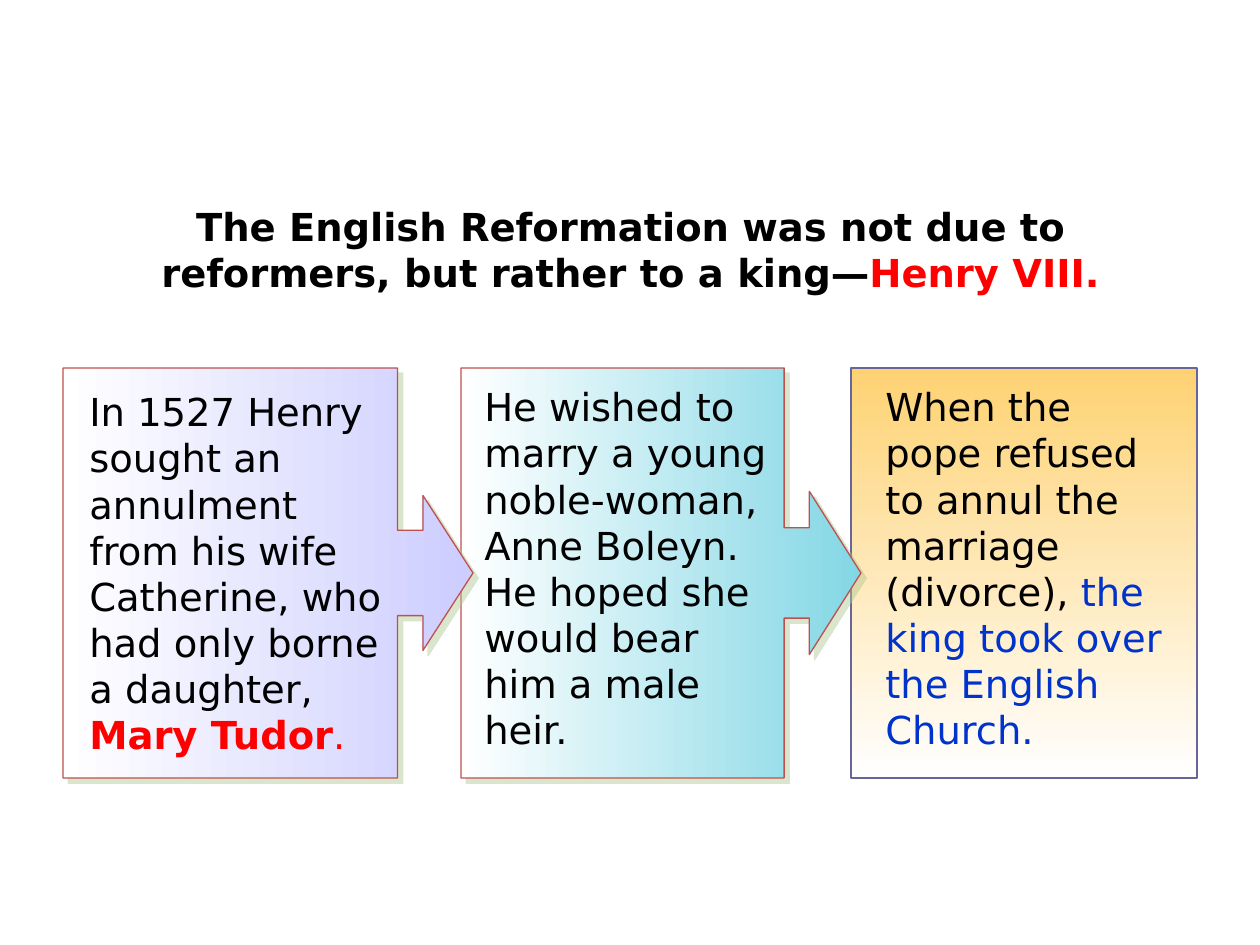
from dataclasses import dataclass

from lxml import etree
from pptx import Presentation
from pptx.dml.color import RGBColor
from pptx.enum.shapes import MSO_SHAPE
from pptx.enum.text import PP_ALIGN
from pptx.oxml.ns import qn
from pptx.util import Pt

RECTANGLE = MSO_SHAPE.RECTANGLE
CALLOUT = MSO_SHAPE.RIGHT_ARROW_CALLOUT
LEFT, CENTER = PP_ALIGN.LEFT, PP_ALIGN.CENTER
EMU_PER_PX = 914400 // 126
SLIDE_SIZE = (1260, 945)
PANEL_TOP, PANEL_HEIGHT = 368, 410


@dataclass(frozen=True)
class Theme:
    font: str = "DejaVu Sans"
    size: int = 22
    line_width: float = 0.75
    black: str = "000000"
    red: str = "FF0000"
    blue: str = "0033CC"
    white: str = "FFFFFF"
    lavender: str = "CDCDFF"
    aqua: str = "83D7E5"
    amber: str = "FED273"
    brick: str = "C0504D"
    slate: str = "666699"
    shadow: str = "ADC793"


THEME = Theme()

TITLE = {
    "box": (116, 197, 1029, 106),
    "runs": [
        ("The English Reformation was not due to reformers, but rather to a king—", THEME.black, True),
        ("Henry VIII.", THEME.red, True),
    ],
}
CAUSE = {
    "shape": CALLOUT, "left": 63, "width": 410,
    "stops": (THEME.white, THEME.lavender), "angle": 0, "line": THEME.brick,
    "adjustments": (0.208, 0.189, 0.122, 0.816),
    "box": (77, 382, 323, 387),
    "runs": [
        ("In 1527 Henry sought an annulment from his wife Catherine, who had only borne a daughter, ", THEME.black, False),
        ("Mary Tudor", THEME.red, True),
        (".", THEME.red, False),
    ],
}
WISH = {
    "shape": CALLOUT, "left": 461, "width": 400,
    "stops": (THEME.white, THEME.aqua), "angle": 0, "line": THEME.brick,
    "adjustments": (0.226, 0.204, 0.129, 0.808),
    "box": (472, 377, 316, 387),
    "runs": [
        ("He wished to marry a young noble-woman, Anne Boleyn. He hoped she would bear him a male heir.", THEME.black, False),
    ],
}
RESULT = {
    "shape": RECTANGLE, "left": 851, "width": 346,
    "stops": (THEME.amber, THEME.white), "angle": 270, "line": THEME.slate,
    "adjustments": (),
    "box": (873, 377, 312, 386),
    "runs": [
        ("When the\npope refused\nto annul the marriage (divorce), ", THEME.black, False),
        ("the king took over the English Church.", THEME.blue, False),
    ],
}


def px(*lengths):
    return [length * EMU_PER_PX for length in lengths]


def add_text(shapes, item, alignment=LEFT):
    frame = shapes.add_textbox(*px(*item["box"])).text_frame
    frame.word_wrap = True
    paragraph = frame.paragraphs[0]
    paragraph.alignment = alignment
    for text, color, bold in item["runs"]:
        for index, line in enumerate(text.split("\n")):
            if index:
                paragraph.add_line_break()
            run = paragraph.add_run()
            run.text = line
            formats = {"name": THEME.font, "size": Pt(THEME.size), "bold": bold}
            for name, value in formats.items():
                setattr(run.font, name, value)
            run.font.color.rgb = RGBColor.from_string(color)


def add_shadow(shape):
    effects = shape._element.spPr.find(qn("a:effectLst"))
    shadow = etree.SubElement(effects, qn("a:outerShdw"), blurRad="0",
                              dist=str(Pt(4.2)), dir="2700000", rotWithShape="0")
    color = etree.SubElement(shadow, qn("a:srgbClr"), val=THEME.shadow)
    etree.SubElement(color, qn("a:alpha"), val="46000")


def add_panel(shapes, panel):
    shape = shapes.add_shape(panel["shape"], *px(panel["left"], PANEL_TOP, panel["width"], PANEL_HEIGHT))
    for index, value in enumerate(panel["adjustments"]):
        shape.adjustments[index] = value
    shape.fill.gradient()
    shape.fill.gradient_angle = panel["angle"]
    for position, (stop, color) in enumerate(zip(shape.fill.gradient_stops, panel["stops"])):
        stop.position = position
        stop.color.rgb = RGBColor.from_string(color)
    shape.line.color.rgb = RGBColor.from_string(panel["line"])
    shape.line.width = Pt(THEME.line_width)
    shape.shadow.inherit = False
    if panel["shape"] == CALLOUT:
        add_shadow(shape)
    add_text(shapes, panel)


def main():
    presentation = Presentation()
    presentation.slide_width, presentation.slide_height = px(*SLIDE_SIZE)
    slide = presentation.slides.add_slide(presentation.slide_layouts[6])
    for panel in (RESULT, WISH):
        add_panel(slide.shapes.add_group_shape().shapes, panel)
    add_text(slide.shapes, TITLE, CENTER)
    add_panel(slide.shapes, CAUSE)
    presentation.save("out.pptx")


if __name__ == "__main__":
    main()
